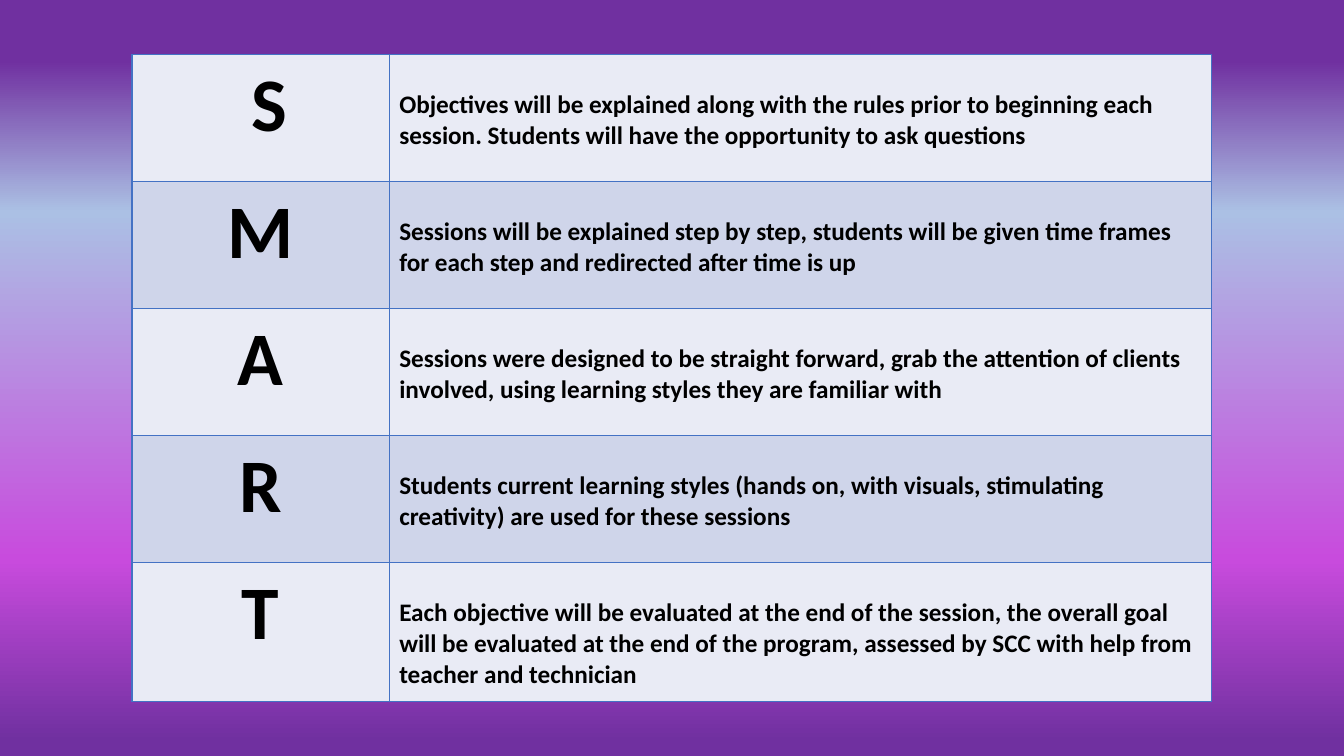
from dataclasses import dataclass

from lxml.etree import SubElement
from pptx import Presentation
from pptx.dml.color import RGBColor
from pptx.enum.text import PP_ALIGN
from pptx.oxml.ns import qn
from pptx.util import Inches, Pt


@dataclass(frozen=True)
class Theme:
    font: str = "Calibri"
    letter_size: int = 54
    body_size: int = 18
    text: str = "000000"
    bands: tuple = ("E9EBF5", "CFD5EA")
    border: str = "4472C4"
    border_width: int = 1
    backdrop: tuple = ((8, "7030A0"), (28, "ABC0E4"), (74, "C84BDD"), (98, "7030A0"))


theme = Theme()

SMART_ROWS = [
    (" S", "Objectives will be explained along with the rules prior to beginning each "
           "session. Students will have the opportunity to ask questions"),
    ("M", "Sessions will be explained step by step, students will be given time frames "
          "for each step and redirected after time is up"),
    ("A", "Sessions were designed to be straight forward, grab the attention of clients "
          "involved, using learning styles they are familiar with"),
    ("R", "Students current learning styles (hands on, with visuals, stimulating "
          "creativity) are used for these sessions"),
    ("T", "Each objective will be evaluated at the end of the session, the overall goal "
          "will be evaluated at the end of the program, assessed by SCC with help from "
          "teacher and technician"),
]
COLUMN_WIDTHS = (2.55, 8.16)
ROW_HEIGHT = 1.26
LAST_ROW_HEIGHT = 1.38
BODY_TOP_MARGIN = 0.35


def add_borders(cell):
    """Draw the same thin line on all four sides of a cell."""
    properties = cell._tc.get_or_add_tcPr()
    for side in ("a:lnL", "a:lnR", "a:lnT", "a:lnB"):
        line = SubElement(properties, qn(side), w=str(Pt(theme.border_width)))
        fill = SubElement(line, qn("a:solidFill"))
        SubElement(fill, qn("a:srgbClr"), val=theme.border)


def add_text(cell, text, size, alignment):
    paragraph = cell.text_frame.paragraphs[0]
    paragraph.alignment = alignment
    run = paragraph.add_run()
    run.text = text
    run.font.name = theme.font
    run.font.size = Pt(size)
    run.font.bold = True
    run.font.color.rgb = RGBColor.from_string(theme.text)


presentation = Presentation()
presentation.slide_width = Inches(13.33)
presentation.slide_height = Inches(7.5)
slide = presentation.slides.add_slide(presentation.slide_layouts[6])

# Background: gradient from top to bottom
background_fill = slide.background.fill
background_fill.gradient()
background_fill.gradient_angle = 270
stops = next(slide._element.iter(qn("a:gsLst")))
for stop in list(stops):
    stops.remove(stop)
for percent, color in theme.backdrop:
    stop = SubElement(stops, qn("a:gs"), pos=str(percent * 1000))
    SubElement(stop, qn("a:srgbClr"), val=color)

# Table frame
row_heights = [ROW_HEIGHT] * (len(SMART_ROWS) - 1) + [LAST_ROW_HEIGHT]
table = slide.shapes.add_table(
    len(SMART_ROWS), len(COLUMN_WIDTHS), Inches(1.31), Inches(0.54),
    Inches(sum(COLUMN_WIDTHS)), Inches(sum(row_heights)),
).table
table.first_row = False
table.horz_banding = False
for column, width in zip(table.columns, COLUMN_WIDTHS):
    column.width = Inches(width)

# Rows: one letter and its explanation each
for index, (letter, explanation) in enumerate(SMART_ROWS):
    table.rows[index].height = Inches(row_heights[index])
    letter_cell, body_cell = table.rows[index].cells
    for cell in (letter_cell, body_cell):
        add_borders(cell)
        cell.fill.solid()
        cell.fill.fore_color.rgb = RGBColor.from_string(theme.bands[index % 2])
    add_text(letter_cell, letter, theme.letter_size, PP_ALIGN.CENTER)
    add_text(body_cell, explanation, theme.body_size, PP_ALIGN.LEFT)
    body_cell.margin_top = Inches(BODY_TOP_MARGIN)

presentation.save("out.pptx")
